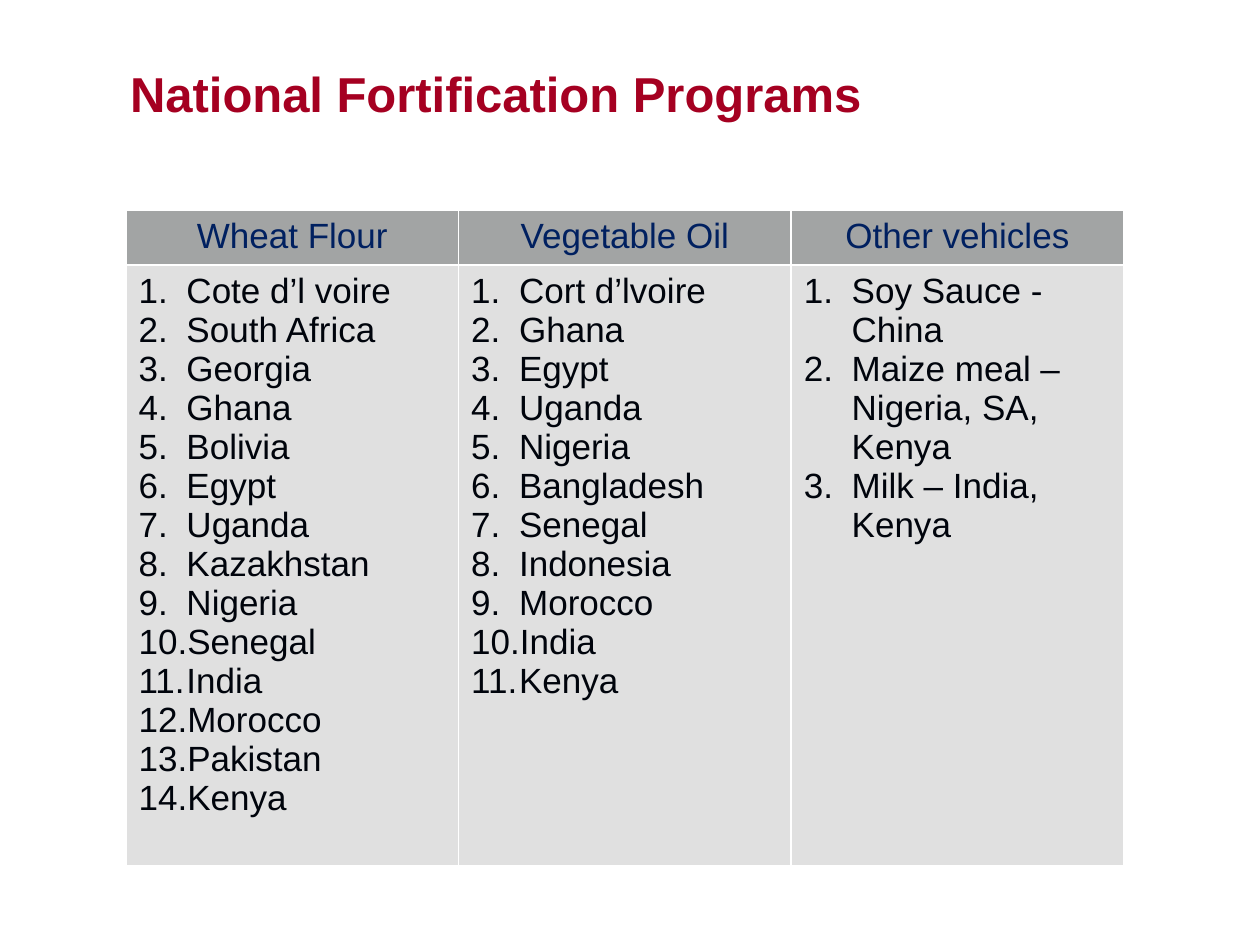
"""Build the National Fortification Programs slide with its three-column table."""
from lxml import etree
from pptx import Presentation, util as u
from pptx.dml.color import RGBColor
from pptx.enum import text
from pptx.oxml import ns

COLORS = {"title": "A50021", "heading": "002060", "body": "00040C",
          "header_fill": "A2A4A4", "body_fill": "E0E0E0", "border": "FFFFFF"}
PROGRAMS = {
    "Wheat Flour": ["Cote d’l voire", "South Africa", "Georgia", "Ghana", "Bolivia",
                    "Egypt", "Uganda", "Kazakhstan", "Nigeria", "Senegal", "India",
                    "Morocco", "Pakistan", "Kenya"],
    "Vegetable Oil": ["Cort d’lvoire", "Ghana", "Egypt", "Uganda", "Nigeria",
                      "Bangladesh", "Senegal", "Indonesia", "Morocco", "India", "Kenya"],
    "Other vehicles": ["Soy Sauce - China", "Maize meal – Nigeria, SA, Kenya",
                       "Milk – India, Kenya"],
}
COLUMN_WIDTH = u.Inches(2.64)
ROW_HEIGHTS = [u.Inches(0.39), u.Inches(4.2)]
INDENT = u.Inches(0.38)


def write(para, words, size, color, bold=False):
    span = para.add_run()
    span.text = words
    for name, value in {"name": "Arial", "size": u.Pt(size), "bold": bold}.items():
        setattr(span.font, name, value)
    span.font.color.rgb = RGBColor.from_string(COLORS[color])


def paint(cell, fill):
    properties = cell._tc.get_or_add_tcPr()
    for side in ("lnL", "lnR", "lnT", "lnB"):
        line = etree.SubElement(properties, ns.qn(f"a:{side}"), w=str(u.Pt(1)))
        solid = etree.SubElement(line, ns.qn("a:solidFill"))
        etree.SubElement(solid, ns.qn("a:srgbClr"), val=COLORS["border"])
    cell.fill.solid()
    cell.fill.fore_color.rgb = RGBColor.from_string(COLORS[fill])


deck = Presentation()
deck.slide_width, deck.slide_height = u.Inches(10), u.Inches(7.5)
page = deck.slides.add_slide(deck.slide_layouts[6])

box = page.shapes.add_textbox(u.Inches(0.46), u.Inches(0.42), u.Inches(6.95), u.Inches(0.91))
frame_format = {"word_wrap": True, "margin_top": u.Inches(0.08),
                "vertical_anchor": text.MSO_ANCHOR.TOP}
for name, value in frame_format.items():
    setattr(box.text_frame, name, value)
title = box.text_frame.paragraphs[0]
title.alignment = text.PP_ALIGN.CENTER
write(title, "National Fortification Programs", 28, "title", bold=True)

table = page.shapes.add_table(2, len(PROGRAMS), u.Inches(1), u.Inches(1.67),
                              COLUMN_WIDTH * len(PROGRAMS), sum(ROW_HEIGHTS)).table
for row, height in zip(table.rows, ROW_HEIGHTS):
    row.height = height

for column, (heading, entries) in enumerate(PROGRAMS.items()):
    table.columns[column].width = COLUMN_WIDTH
    header, body = table.cell(0, column), table.cell(1, column)
    paint(header, "header_fill")
    paint(body, "body_fill")
    para = header.text_frame.paragraphs[0]
    para.alignment = text.PP_ALIGN.CENTER
    write(para, heading, 20, "heading")
    for index, entry in enumerate(entries):
        para = body.text_frame.add_paragraph() if index else body.text_frame.paragraphs[0]
        layout = para._p.get_or_add_pPr()
        layout.set("marL", str(INDENT))
        layout.set("indent", str(-INDENT))
        etree.SubElement(layout, ns.qn("a:buFont"), typeface="+mj-lt")
        etree.SubElement(layout, ns.qn("a:buAutoNum"), type="arabicPeriod")
        layout.find(ns.qn("a:buFont")).set("typeface", "Arial")
        write(para, entry, 20, "body")

deck.save("out.pptx")
